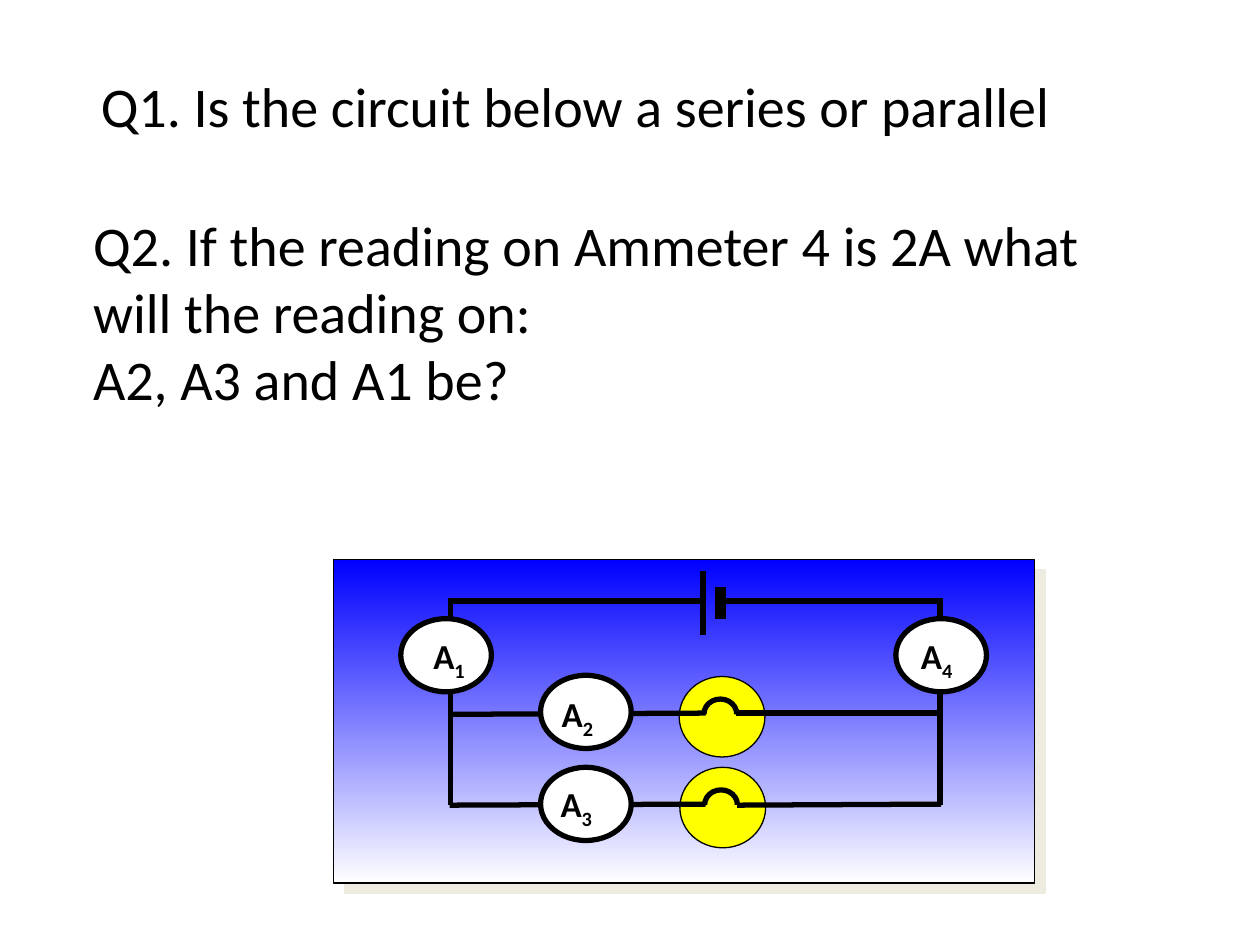
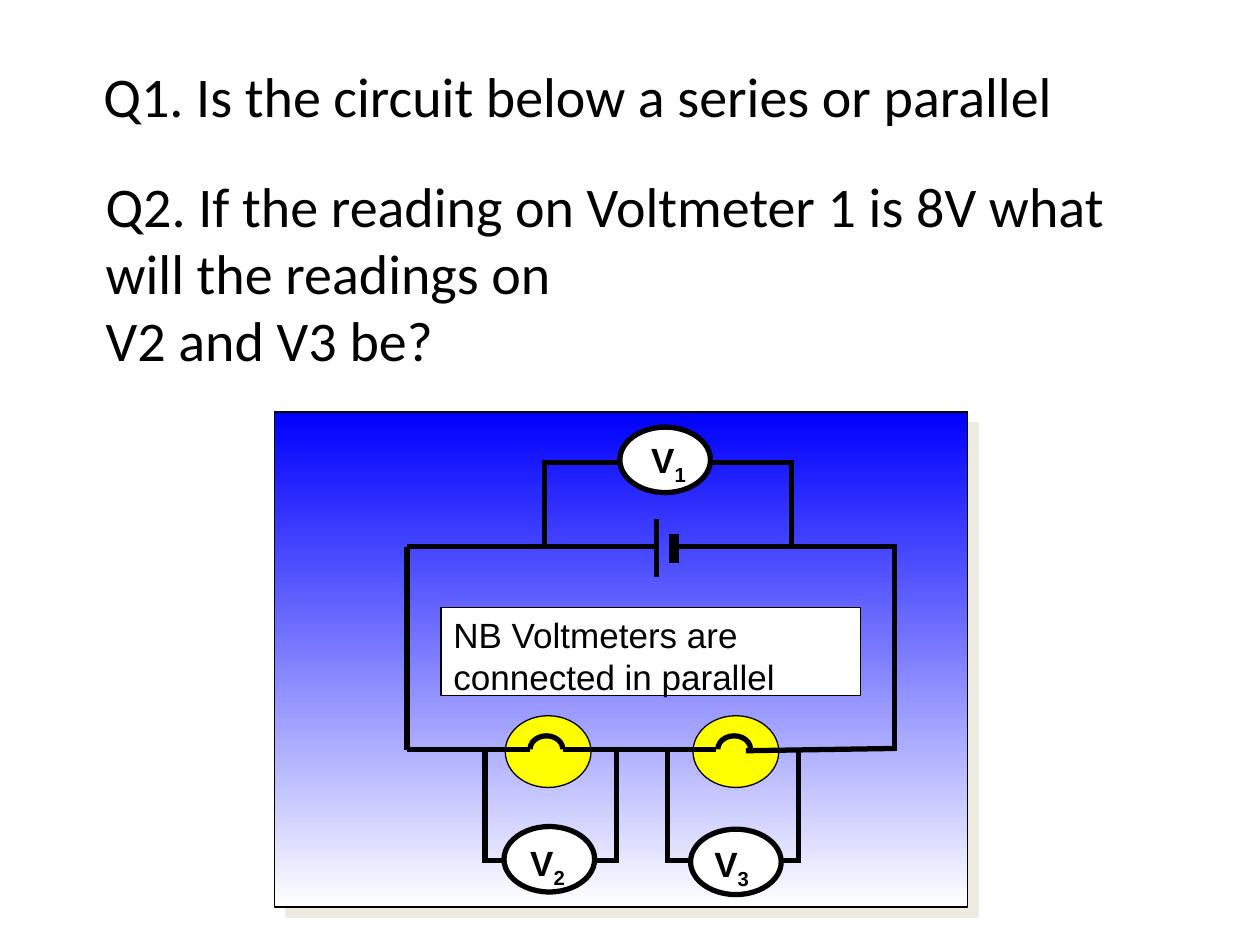
from lxml import etree
from pptx import Presentation
from pptx.dml.color import RGBColor
from pptx.enum import shapes, text
from pptx.oxml import ns
from pptx.util import Pt

BLACK = RGBColor(0x00, 0x00, 0x00)
WHITE = RGBColor(0xFF, 0xFF, 0xFF)
YELLOW = RGBColor(0xFF, 0xFF, 0x00)
BLUE = RGBColor(0x00, 0x00, 0xFF)
SHADOW = RGBColor(0xEE, 0xEC, 0xE1)

THIN, WIRE, PLATE = 0.75, 3, 6
METER_WIDTH, BULB_WIDTH, PLATE_GAP = 51.8, 49, 10
QUESTION = {"size": Pt(32), "name": "Calibri"}
TITLE_TEXT = "Q1. Is the circuit below a series or parallel"
TITLE_SIZE, BODY_SIZE = (648, 90), (629.3, 123.8)

# Boxes are (left, top, width, height); wires are (x1, y1, x2, y2).
# Meters are (left, top, letter, number, label dx, label dy).
# Loops are (left, right, y at the circuit, y at the meter).
SLIDES = [
    {
        "title_at": (5, 15.1),
        "body_at": (46.1, 116.6),
        "body": ["Q2. If the reading on Ammeter 4 is 2A what will the reading on:",
                 "A2, A3 and A1 be?"],
        "panel": (190.8, 319.7, 400.3, 185),
        "bulb_height": 46,
        "bulbs": [(388.1, 386.6), (388.5, 438.5)],
        "battery": (401.8, 344.5, 18.4),
        "wires": [
            (256.3, 343.4, 401, 343.4), (411.8, 343.4, 538.6, 343.4),
            (257.4, 343.4, 257.4, 460.1), (537.1, 343.4, 537.1, 460.1),
            (257, 408.2, 403.2, 407.5), (420.5, 407.5, 537.8, 407.5),
            (257, 460.1, 403.2, 459.5), (421.2, 460.1, 537.8, 459.5),
        ],
        "loops": [],
        "meter_height": 41.8,
        "meter_font": "Calibri",
        "meters": [
            (229, 353.5, "A", "1", 11.5, 5.8), (308.9, 385.9, "A", "2", 5, 6.5),
            (308.9, 438.5, "A", "3", 4.3, 5), (511.9, 353.5, "A", "4", 7.2, 5.8),
        ],
        "note": None,
    },
    {
        "title_at": (6.5, 9.4),
        "body_at": (53.3, 94.3),
        "body": ["Q2. If the reading on Voltmeter 1 is 8V what will the readings on",
                 "V2 and V3 be?"],
        "panel": (157, 235.4, 396, 283),
        "bulb_height": 41,
        "bulbs": [(288.7, 409), (396, 409)],
        "battery": (375.1, 313.2, 16.6),
        "wires": [
            (232.6, 312.5, 374.4, 312.5), (385.2, 312.5, 512, 312.5),
            (232.6, 312.5, 232.6, 428.4), (511.2, 311, 511.2, 429),
            (232.6, 428.4, 303.1, 428.4), (321.8, 428.4, 409, 428.4),
            (426.2, 429, 511.2, 427.7),
        ],
        "loops": [(311, 452.2, 312, 264.2), (277.2, 352.1, 428.4, 491.8),
                  (381.6, 456.5, 428.4, 491.8)],
        "meter_height": 37.4,
        "meter_font": "Arial",
        "meters": [
            (288, 472.3, "V", "2", 7.9, 5.1), (394.6, 473.8, "V", "3", 6.5, 4.3),
            (354.2, 244.1, "V", "1", 10.8, 2.9),
        ],
        "note": ((252, 347, 239.8, 50.4), "NB Voltmeters are connected in parallel"),
    },
]


def style_font(span, **values):
    for name, value in values.items():
        setattr(span.font, name, value)
    span.font.color.rgb = BLACK


def write(box, paragraphs, font, align=text.PP_ALIGN.LEFT,
          anchor=text.MSO_ANCHOR.TOP, wrap=True):
    frame = box.text_frame
    frame.word_wrap = wrap
    frame.vertical_anchor = anchor
    for number, words in enumerate(paragraphs):
        para = frame.add_paragraph() if number else frame.paragraphs[0]
        para.alignment = align
        span = para.add_run()
        span.text = words
        style_font(span, **font)
    return frame


def add_solid(parts, kind, box, fill, line=None):
    shape = parts.add_shape(kind, *map(Pt, box))
    shape.shadow.inherit = False
    shape.fill.solid()
    shape.fill.fore_color.rgb = fill
    if line:
        shape.line.color.rgb = BLACK
        shape.line.width = Pt(line)
    else:
        shape.line.fill.background()
    return shape


def add_wire(parts, ends, width=WIRE):
    wire = parts.add_connector(shapes.MSO_CONNECTOR.STRAIGHT, *map(Pt, ends))
    wire.line.color.rgb = BLACK
    wire.line.width = Pt(width)
    etree.SubElement(wire._element.spPr, ns.qn("a:effectLst"))


def add_panel(parts, box):
    """Blue-to-white backdrop with a hard offset shadow."""
    panel = add_solid(parts, shapes.MSO_SHAPE.RECTANGLE, box, WHITE, THIN)
    panel.fill.gradient()
    panel.fill.gradient_angle = 270
    for stop, colour, position in zip(panel.fill.gradient_stops, (BLUE, WHITE), (0, 1)):
        stop.color.rgb = colour
        stop.position = position
    effects = panel._element.spPr.find(ns.qn("a:effectLst"))
    shadow = etree.SubElement(effects, ns.qn("a:outerShdw"), blurRad="0",
                              dist=str(Pt(8.5)), dir="2700000", algn="ctr", rotWithShape="0")
    etree.SubElement(shadow, ns.qn("a:srgbClr"), val=str(SHADOW))


def add_bulb(parts, left, top, height):
    """Yellow disc with a half-ring filament, its lower half masked."""
    oval, rect = shapes.MSO_SHAPE.OVAL, shapes.MSO_SHAPE.RECTANGLE
    add_solid(parts, oval, (left, top, BULB_WIDTH, height), YELLOW, THIN)
    add_solid(parts, oval, (left + 14.2, top + 0.28 * height, 18.7, 0.37 * height),
              YELLOW, WIRE)
    add_solid(parts, rect, (left + 12.4, top + 0.47 * height, 22.3, 0.27 * height), YELLOW)


def add_battery(parts, x, y, half):
    add_wire(parts, (x, y - half, x, y + half))
    x += PLATE_GAP
    add_wire(parts, (x, y - half / 2, x, y + half / 2), PLATE)


def add_loop(parts, left, right, circuit_y, meter_y):
    """Three wires that put a meter across part of the circuit."""
    for x in (left, right):
        add_wire(parts, (x, circuit_y, x, meter_y))
    add_wire(parts, (left - 1.5, meter_y, right + 1.5, meter_y))


def add_meter(parts, meter, height, font_name):
    left, top, letter, number, dx, dy = meter
    add_solid(parts, shapes.MSO_SHAPE.OVAL, (left, top, METER_WIDTH, height), WHITE, WIRE)
    label = parts.add_textbox(*map(Pt, (left + dx, top + dy, 40, 30)))
    font = {"size": Pt(20), "name": font_name, "bold": True}
    frame = write(label, [letter], font, wrap=False)
    subscript = frame.paragraphs[0].add_run()
    subscript.text = number
    style_font(subscript, **font)
    subscript._r.get_or_add_rPr().set("baseline", "-25000")


def add_circuit(page, content):
    parts = page.shapes.add_group_shape().shapes
    add_panel(parts, content["panel"])
    for left, top in content["bulbs"]:
        add_bulb(parts, left, top, content["bulb_height"])
    add_battery(parts, *content["battery"])
    for ends in content["wires"]:
        add_wire(parts, ends)
    for loop in content["loops"]:
        add_loop(parts, *loop)
    for meter in content["meters"]:
        add_meter(parts, meter, content["meter_height"], content["meter_font"])
    if content["note"]:
        box, words = content["note"]
        note = add_solid(parts, shapes.MSO_SHAPE.RECTANGLE, box, WHITE, THIN)
        write(note, [words], {"size": Pt(20), "name": "Arial"})


def add_page(deck, content):
    page = deck.slides.add_slide(deck.slide_layouts[6])
    title = page.shapes.add_textbox(*map(Pt, content["title_at"] + TITLE_SIZE))
    write(title, [TITLE_TEXT], QUESTION, text.PP_ALIGN.CENTER, text.MSO_ANCHOR.MIDDLE)
    add_circuit(page, content)
    body = page.shapes.add_textbox(*map(Pt, content["body_at"] + BODY_SIZE))
    write(body, content["body"], QUESTION)


def main():
    deck = Presentation()
    deck.slide_width, deck.slide_height = Pt(720), Pt(540)
    for content in SLIDES:
        add_page(deck, content)
    deck.save("out.pptx")


if __name__ == "__main__":
    main()
